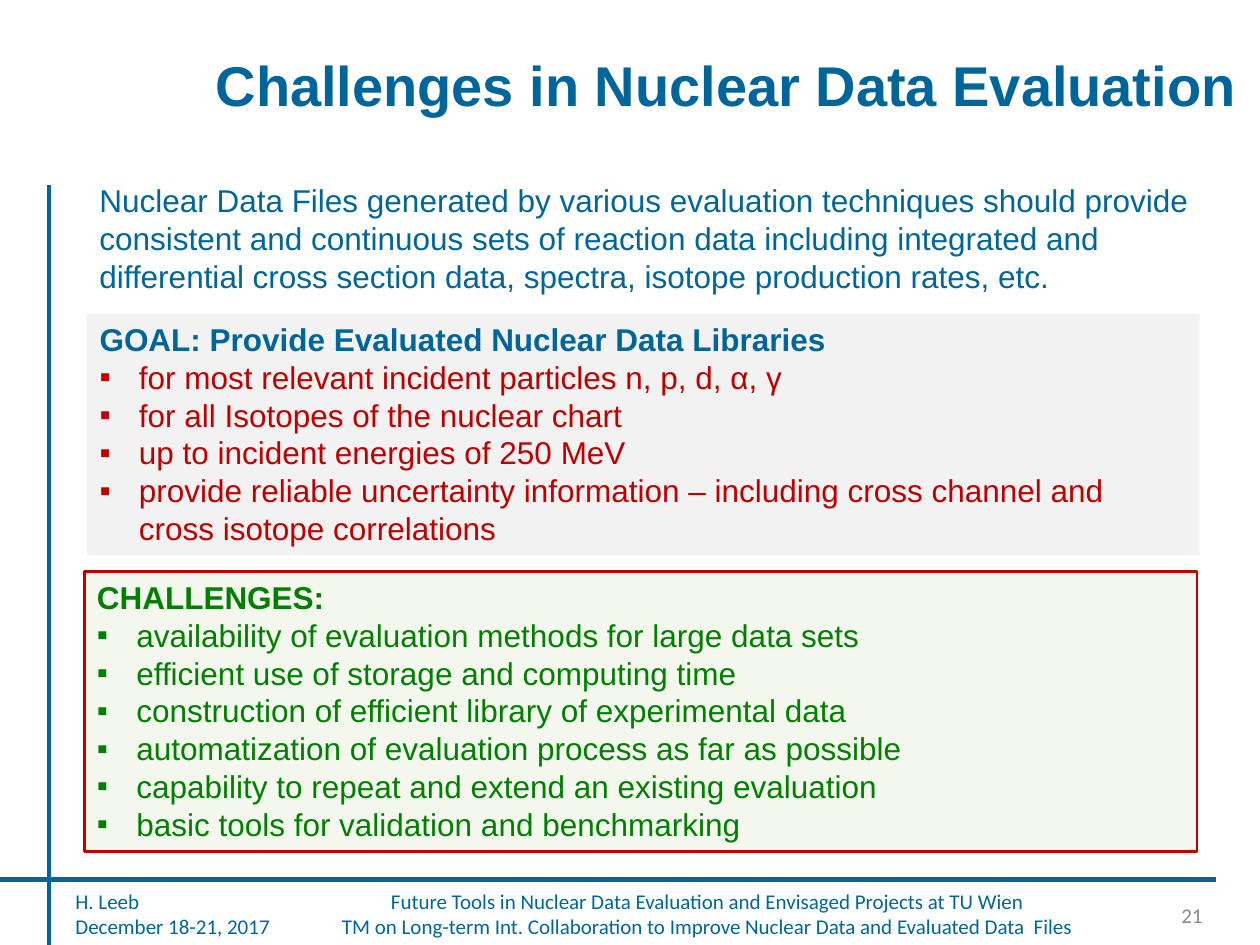
import pptx
import pptx.dml.color
import pptx.enum.shapes
import pptx.enum.text
import pptx.oxml
import pptx.oxml.ns
import pptx.util

Pt = pptx.util.Pt
Align = pptx.enum.text.PP_ALIGN
Anchor = pptx.enum.text.MSO_ANCHOR

BLUE = "006699"
RED = "C00000"
GREEN = "008000"
GREY = "898989"
PALE_GREY = "F2F2F2"
PALE_GREEN = "EBF1DE"
INDENT = 22.5

GOALS = [
    "for most relevant incident particles n, p, d, α, γ",
    "for all Isotopes of the nuclear chart",
    "up to incident energies of 250 MeV",
    "provide reliable uncertainty information – including cross channel and cross isotope correlations",
]
CHALLENGES = [
    "availability of evaluation methods for large data sets",
    "efficient use of storage and computing time",
    "construction of efficient library of experimental data",
    "automatization of evaluation process as far as possible",
    "capability to repeat and extend an existing evaluation",
    "basic tools for validation and benchmarking",
]


def rgb(code):
    return pptx.dml.color.RGBColor.from_string(code)


def add_xml(parent, tag, **attributes):
    element = pptx.oxml.parse_xml(f"<a:{tag} {pptx.oxml.ns.nsdecls('a')}/>")
    for name, value in attributes.items():
        element.set(name, str(value))
    parent.append(element)


def place(shape, left, top, width, height):
    shape.left, shape.top = Pt(left), Pt(top)
    shape.width, shape.height = Pt(width), Pt(height)


def format_para(para, size, color, font="Arial", bold=False, align=Align.LEFT):
    para.alignment = align
    para.font.name = font
    para.font.size = Pt(size)
    para.font.bold = bold
    para.font.color.rgb = rgb(color)


def set_bullet(para, bulleted):
    properties = para._p.get_or_add_pPr()
    indent = Pt(INDENT) if bulleted else 0
    properties.set("marL", str(indent))
    properties.set("indent", str(-indent))
    if bulleted:
        add_xml(properties, "buFont", typeface="Arial")
        add_xml(properties, "buChar", char="▪")
    else:
        add_xml(properties, "buNone")


def prepare_frame(shape, anchor, wrap=True):
    frame = shape.text_frame
    frame.word_wrap = wrap
    frame.auto_size = pptx.enum.text.MSO_AUTO_SIZE.NONE
    frame.vertical_anchor = anchor
    return frame


def fill_title(title, text, bounds):
    place(title, *bounds)
    frame = prepare_frame(title, Anchor.TOP, wrap=False)
    frame.text = text
    format_para(frame.paragraphs[0], 32, BLUE, bold=True)


def fill_list(body, bounds, heading, items, heading_color, item_color, fill):
    place(body, *bounds)
    body.fill.solid()
    body.fill.fore_color.rgb = rgb(fill)
    frame = prepare_frame(body, Anchor.TOP)
    frame.text = "\n".join([heading, *items])
    for index, para in enumerate(frame.paragraphs):
        is_item = index > 0
        para.space_before = Pt(0)
        set_bullet(para, is_item)
        format_para(para, 18, item_color if is_item else heading_color, bold=not is_item)


def outline_translucent(body, line_color, line_width, opacity):
    body.line.color.rgb = rgb(line_color)
    body.line.width = Pt(line_width)
    fill_color = body._element.spPr.find(pptx.oxml.ns.qn("a:solidFill"))[0]
    add_xml(fill_color, "alpha", val=opacity * 1000)


def add_text(page, bounds, lines, size, color, font, align=Align.LEFT, anchor=Anchor.MIDDLE):
    box = page.shapes.add_textbox(*map(Pt, bounds))
    frame = prepare_frame(box, anchor)
    frame.text = "\n".join(lines)
    for para in frame.paragraphs:
        format_para(para, size, color, font, align=align)


def add_rule(page, *ends):
    straight = pptx.enum.shapes.MSO_CONNECTOR.STRAIGHT
    rule = page.shapes.add_connector(straight, *map(Pt, ends))
    rule.line.color.rgb = rgb(BLUE)
    rule.line.width = Pt(2.75)
    add_xml(rule._element.spPr, "effectLst")


def main():
    deck = pptx.Presentation()
    deck.slide_width, deck.slide_height = Pt(720), Pt(540)
    page = deck.slides.add_slide(deck.slide_layouts.get_by_name("Two Content"))
    title, goal_body, challenge_body = page.placeholders

    add_rule(page, 0, 502.5, 695, 502.5)
    add_rule(page, 28, 106, 28, 540)
    fill_title(title, "Challenges in Nuclear Data Evaluation", (116, 25, 603, 46))
    add_text(page, (49.7, 100, 639.5, 73), [
        "Nuclear Data Files generated by various evaluation techniques should provide "
        "consistent and continuous sets of reaction data including integrated and "
        "differential cross section data, spectra, isotope production rates, etc.",
    ], 18, BLUE, "Arial", anchor=Anchor.TOP)
    fill_list(goal_body, (49.7, 179.3, 635.8, 138),
              "GOAL: Provide Evaluated Nuclear Data Libraries", GOALS, BLUE, RED, PALE_GREY)
    fill_list(challenge_body, (48.2, 326.7, 635.8, 160),
              "CHALLENGES:", CHALLENGES, GREEN, GREEN, PALE_GREEN)
    outline_translucent(challenge_body, RED, 1.5, 50)

    add_text(page, (36, 507.6, 131, 29), ["H. Leeb", "December 18-21, 2017"], 12, BLUE, "Calibri")
    add_text(page, (170.6, 507.6, 467.3, 29), [
        "Future Tools in Nuclear Data Evaluation and Envisaged Projects at TU Wien",
        "TM on Long-term Int. Collaboration to Improve Nuclear Data and Evaluated Data  Files",
    ], 12, BLUE, "Calibri", Align.CENTER)
    add_text(page, (526.3, 508.3, 168, 29), ["21"], 12, GREY, "Calibri", Align.RIGHT)
    deck.save("out.pptx")


if __name__ == "__main__":
    main()
